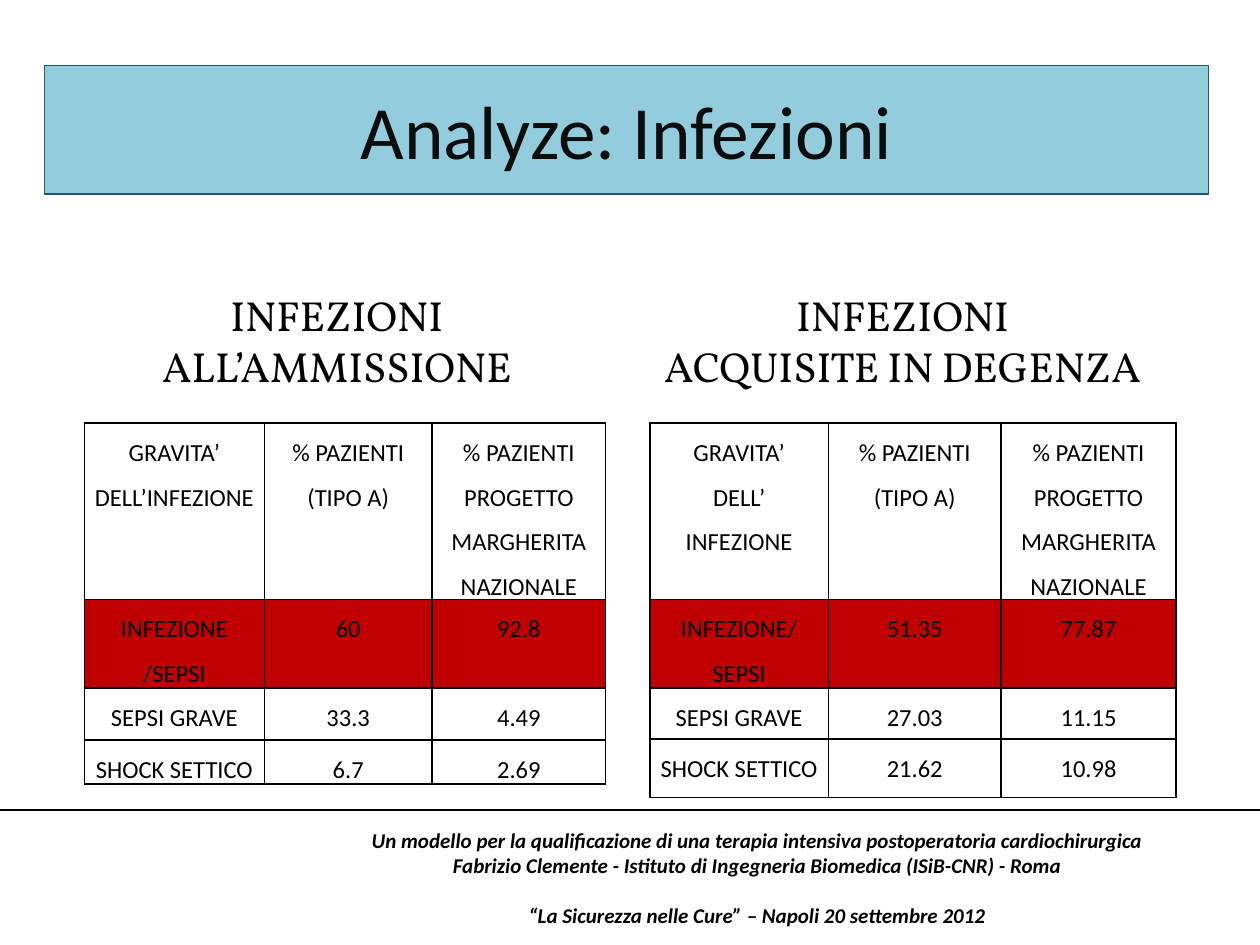
from lxml import etree
from pptx import Presentation
from pptx.dml.color import RGBColor
from pptx.enum.shapes import MSO_CONNECTOR
from pptx.enum.text import MSO_ANCHOR, MSO_AUTO_SIZE, PP_ALIGN
from pptx.oxml import parse_xml
from pptx.oxml.ns import nsdecls, qn
from pptx.util import Cm, Pt

STRAIGHT = MSO_CONNECTOR.STRAIGHT
MIDDLE = MSO_ANCHOR.MIDDLE
NO_AUTOFIT = MSO_AUTO_SIZE.NONE
CENTER = PP_ALIGN.CENTER
BLACK = "000000"
RED = "C00000"


def rgb(value):
    return RGBColor.from_string(value)


def write(frame, text, font, size, color=BLACK, spacing=1.0):
    """Fill a text frame with centred paragraphs in one format."""
    frame.text = text
    frame.word_wrap = True
    for paragraph in frame.paragraphs:
        paragraph.alignment = CENTER
        paragraph.line_spacing = spacing
        for run in paragraph.runs:
            run.font.name = font
            run.font.size = Pt(size)
            run.font.color.rgb = rgb(color)


prs = Presentation()
prs.slide_width, prs.slide_height = Cm(25.4), Cm(19.05)
slide = prs.slides.add_slide(prs.slide_layouts[5])

# Title band
title = slide.shapes.title
title.left, title.top, title.width, title.height = Cm(0.89), Cm(1.32), Cm(23.47), Cm(2.59)
title.fill.solid()
title.fill.fore_color.rgb = rgb("93CDDD")
title.line.color.rgb = rgb("215968")
title.line.width = Pt(0.75)
write(title.text_frame, "Analyze: Infezioni", "Calibri", 43, "0D0D0D")
title.text_frame.auto_size = NO_AUTOFIT
title.text_frame.vertical_anchor = MIDDLE

# Headings above the tables
headings = [
    (2.69, 8.2, "INFEZIONI ALL’AMMISSIONE"),
    (12.9, 10.59, "INFEZIONI\nACQUISITE IN DEGENZA"),
]
for left, width, text in headings:
    heading = slide.shapes.add_textbox(Cm(left), Cm(5.72), Cm(width), Cm(2.29))
    write(heading.text_frame, text, "Vollkorn", 24)

# Tables: left edge, column widths, row heights, cells
patients = "% PAZIENTI\n(TIPO A)"
national = "% PAZIENTI PROGETTO MARGHERITA NAZIONALE"
tables = [
    (1.7, [3.63, 3.38, 3.5], [3.56, 1.77, 1.05, 0.88], [
        ["GRAVITA’ DELL’INFEZIONE", patients, national],
        ["INFEZIONE /SEPSI", "60", "92.8"],
        ["SEPSI GRAVE", "33.3", "4.49"],
        ["SHOCK SETTICO", "6.7", "2.69"],
    ]),
    (13.1, [3.6, 3.48, 3.53], [3.56, 1.77, 1.03, 1.18], [
        ["GRAVITA’\nDELL’ INFEZIONE", patients, national],
        ["INFEZIONE/SEPSI", "51.35", "77.87"],
        ["SEPSI GRAVE", "27.03", "11.15"],
        ["SHOCK SETTICO", "21.62", "10.98"],
    ]),
]
for left, widths, heights, rows in tables:
    table = slide.shapes.add_table(
        len(rows), len(widths), Cm(left), Cm(8.53), Cm(sum(widths)), Cm(sum(heights))
    ).table
    table.first_row = table.horz_banding = False
    for column, width in zip(table.columns, widths):
        column.width = Cm(width)
    for row, height in zip(table.rows, heights):
        row.height = Cm(height)
    for r, row in enumerate(rows):
        for c, text in enumerate(row):
            cell = table.cell(r, c)
            cell.margin_left = cell.margin_right = Cm(0.18)
            cell.margin_top = cell.margin_bottom = Cm(0)
            write(cell.text_frame, text, "Calibri", 14, spacing=1.5)
            properties = cell._tc.get_or_add_tcPr()
            for side in ("lnL", "lnR", "lnT", "lnB"):
                properties.append(parse_xml(
                    f'<a:{side} {nsdecls("a")} w="{Pt(1)}"><a:solidFill>'
                    f'<a:srgbClr val="{BLACK}"/></a:solidFill></a:{side}>'
                ))
            if r == 1:
                cell.fill.solid()
                cell.fill.fore_color.rgb = rgb(RED)
            else:
                cell.fill.background()
            # The fill has to follow the borders in the cell properties
            fill = properties.find(qn("a:solidFill" if r == 1 else "a:noFill"))
            properties.append(fill)

# Footer
rule = slide.shapes.add_connector(STRAIGHT, Cm(0), Cm(16.33), Cm(25.4), Cm(16.33))
rule.line.color.rgb = rgb(BLACK)
rule.line.width = Pt(0.75)
etree.SubElement(rule._element.spPr, qn("a:effectLst"))

footer = slide.shapes.add_textbox(Cm(6.91), Cm(16.33), Cm(16.71), Cm(2.72))
write(
    footer.text_frame,
    "Un modello per la qualificazione di una terapia intensiva postoperatoria cardiochirurgica\n"
    "Fabrizio Clemente - Istituto di Ingegneria Biomedica (ISiB-CNR) - Roma\n"
    "“La Sicurezza nelle Cure” – Napoli 20 settembre 2012",
    "Calibri", 12,
)
footer.text_frame.vertical_anchor = MIDDLE
for paragraph in footer.text_frame.paragraphs:
    for run in paragraph.runs:
        run.font.bold = run.font.italic = True
footer.text_frame.paragraphs[-1].space_before = Pt(14.4)

prs.save("out.pptx")
